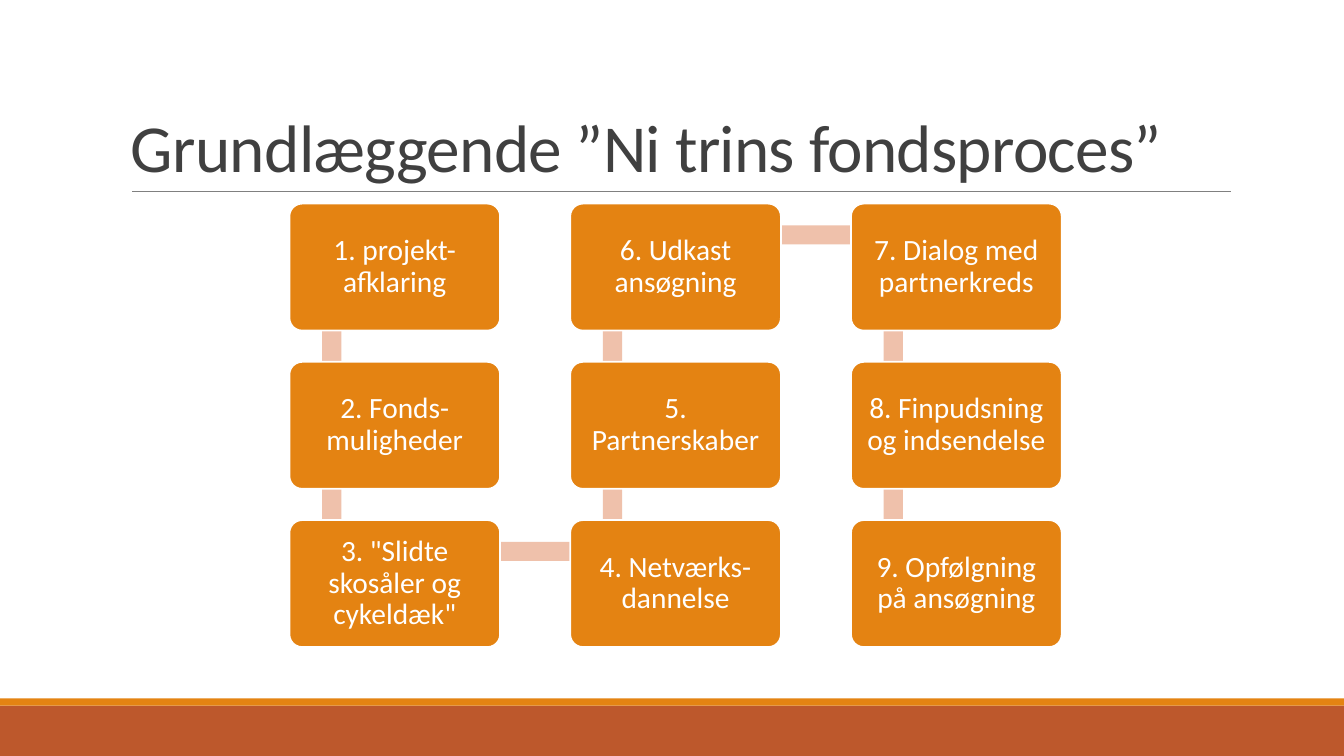
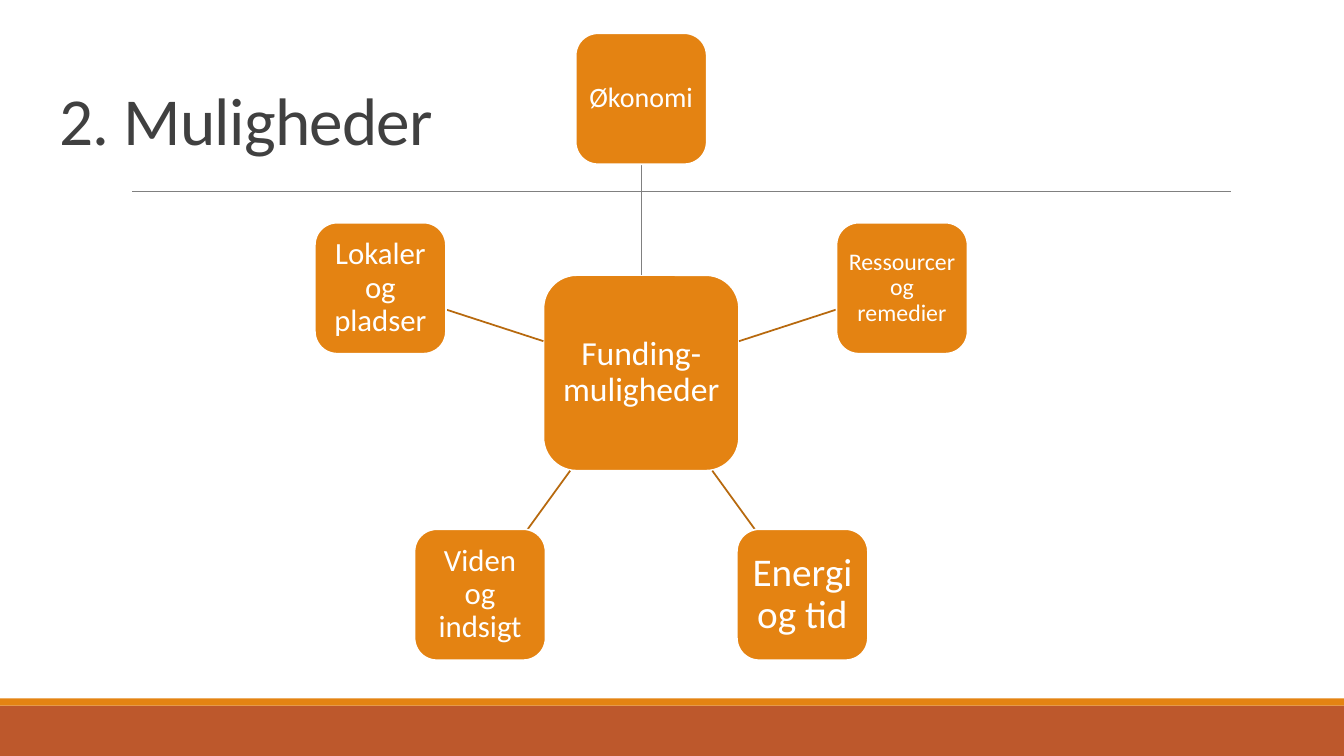
from math import cos, radians, sin

from lxml import etree
from pptx import Presentation
from pptx.dml.color import RGBColor
from pptx.enum.shapes import MSO_CONNECTOR, MSO_SHAPE
from pptx.enum.text import MSO_ANCHOR, PP_ALIGN
from pptx.oxml.ns import qn
from pptx.util import Inches, Pt

RECT, ROUND = MSO_SHAPE.RECTANGLE, MSO_SHAPE.ROUNDED_RECTANGLE
STRAIGHT = MSO_CONNECTOR.STRAIGHT
MIDDLE, BOTTOM = MSO_ANCHOR.MIDDLE, MSO_ANCHOR.BOTTOM
CENTER = PP_ALIGN.CENTER

W, H = 13.33, 7.5
FONT = "Calibri"
HEX = {"rust": "BD582C", "orange": "E48312", "peach": "EFC1AB", "brown": "B7690E",
       "gray": "808080", "dark": "404040", "white": "FFFFFF"}
RGB = {name: RGBColor.from_string(code) for name, code in HEX.items()}


def add_box(slide, kind, x, y, w, h, fill, text="", size=0, inset=0.0, round=0.17):
    """A filled shape; rounded ones get a white edge and centred text."""
    box = slide.shapes.add_shape(kind, Inches(x), Inches(y), Inches(w), Inches(h))
    box.shadow.inherit = False
    box.fill.solid()
    box.fill.fore_color.rgb = RGB[fill]
    if kind == RECT:
        box.line.fill.background()
        return box
    box.adjustments[0] = round
    box.line.color.rgb = RGB["white"]
    box.line.width = Pt(1.25)
    frame = box.text_frame
    frame.word_wrap = True
    frame.vertical_anchor = MIDDLE
    frame.margin_left = frame.margin_right = Inches(inset)
    frame.margin_top = frame.margin_bottom = Inches(inset)
    para = frame.paragraphs[0]
    para.alignment = CENTER
    para.line_spacing = 0.9
    run = para.add_run()
    run.text = text
    run.font.name, run.font.size = FONT, Pt(size)
    run.font.color.rgb = RGB["white"]
    return box


def add_line(slide, x1, y1, x2, y2, color, width):
    line = slide.shapes.add_connector(
        STRAIGHT, Inches(x1), Inches(y1), Inches(x2), Inches(y2))
    line.line.color.rgb = RGB[color]
    line.line.width = Pt(width)
    etree.SubElement(line._element.spPr, qn("a:effectLst"))
    return line


deck = Presentation()
deck.slide_width, deck.slide_height = Inches(W), Inches(H)
blank = deck.slide_layouts[6]

# Shared frame: bands, rule and title
titles = [
    ("Grundlæggende ”Ni trins fondsproces”", 1.2, 0.31, 11, 1.59),
    ("2. Muligheder", 0.49, 0.45, 5.64, 1.18),
]
slides = []
for text, x, y, w, h in titles:
    slide = deck.slides.add_slide(blank)
    slides.append(slide)
    add_box(slide, RECT, 0, H - 0.5, W, 0.5, "rust")
    add_box(slide, RECT, 0, H - 0.57, W, 0.07, "orange")
    add_line(slide, 1.31, 1.9, 12.21, 1.9, "gray", 0.5)
    frame = slide.shapes.add_textbox(
        Inches(x), Inches(y), Inches(w), Inches(h)).text_frame
    frame.word_wrap = True
    frame.vertical_anchor = BOTTOM
    para = frame.paragraphs[0]
    para.line_spacing = 0.85
    run = para.add_run()
    run.text = text
    run.font.name, run.font.size = FONT, Pt(48)
    run.font.color.rgb = RGB["dark"]
    run._r.get_or_add_rPr().set("spc", "-50")

steps_page, hub_page = slides

# Slide 1: nine steps winding down, up and down a 3 by 3 grid
steps = ["1. projekt-afklaring", "2. Fonds-muligheder",
         "3. \"Slidte skosåler og cykeldæk\"", "4. Netværks-dannelse",
         "5. Partnerskaber", "6. Udkast ansøgning", "7. Dialog med partnerkreds",
         "8. Finpudsning og indsendelse", "9. Opfølgning på ansøgning"]
ROWS = 3
LEFT, TOP = 2.87, 2.02
COL, ROW = 2.785, 1.57
BAR = 0.19
cells = []
for i in range(len(steps)):
    col, row = divmod(i, ROWS)
    if col % 2:
        row = ROWS - 1 - row
    cells.append((LEFT + col * COL, TOP + row * ROW))

# Bars run between one fixed point in each box
for (x1, y1), (x2, y2) in zip(cells, cells[1:]):
    x, y = min(x1, x2) + 0.42, min(y1, y2) + 0.31
    if x1 == x2:
        add_box(steps_page, RECT, x - BAR / 2, y, BAR, ROW, "peach")
    else:
        add_box(steps_page, RECT, x, y - BAR / 2, COL, BAR, "peach")

for (x, y), text in zip(cells, steps):
    add_box(steps_page, ROUND, x, y, 2.09, 1.26, "orange", text, 21, 21 / 240, 0.1)

# Slide 2: a hub with five squares at equal angles
MID_X, MID_Y, REACH = 6.36, 3.7, 2.72
HUB, SIDE = 1.94, 1.3
hub = add_box(hub_page, ROUND, MID_X - HUB / 2, MID_Y - HUB / 2, HUB, HUB,
              "orange", "Funding-muligheder", 24, 24 / 360)
spokes = [("Økonomi", 20), ("Ressourcer og remedier", 17), ("Energi og tid", 28),
          ("Viden og indsigt", 22), ("Lokaler og pladser", 22)]
for i, (text, size) in enumerate(spokes):
    turn = radians(i * 360 / len(spokes))
    dx, dy = REACH * sin(turn), -REACH * cos(turn)
    x, y = MID_X + dx, MID_Y + dy
    # Share of the spoke hidden by each square
    span = 2 * max(abs(dx), abs(dy))
    near, far = HUB / span, 1 - SIDE / span
    color, width = ("brown", 1.25) if i else ("gray", 0.5)
    line = add_line(hub_page, MID_X + near * dx, MID_Y + near * dy,
                    MID_X + far * dx, MID_Y + far * dy, color, width)
    box = add_box(hub_page, ROUND, x - SIDE / 2, y - SIDE / 2, SIDE, SIDE,
                  "orange", text, size, size / 360)
    if i == 0:
        line.begin_connect(hub, 0)
        line.end_connect(box, 2)

deck.save("out.pptx")
